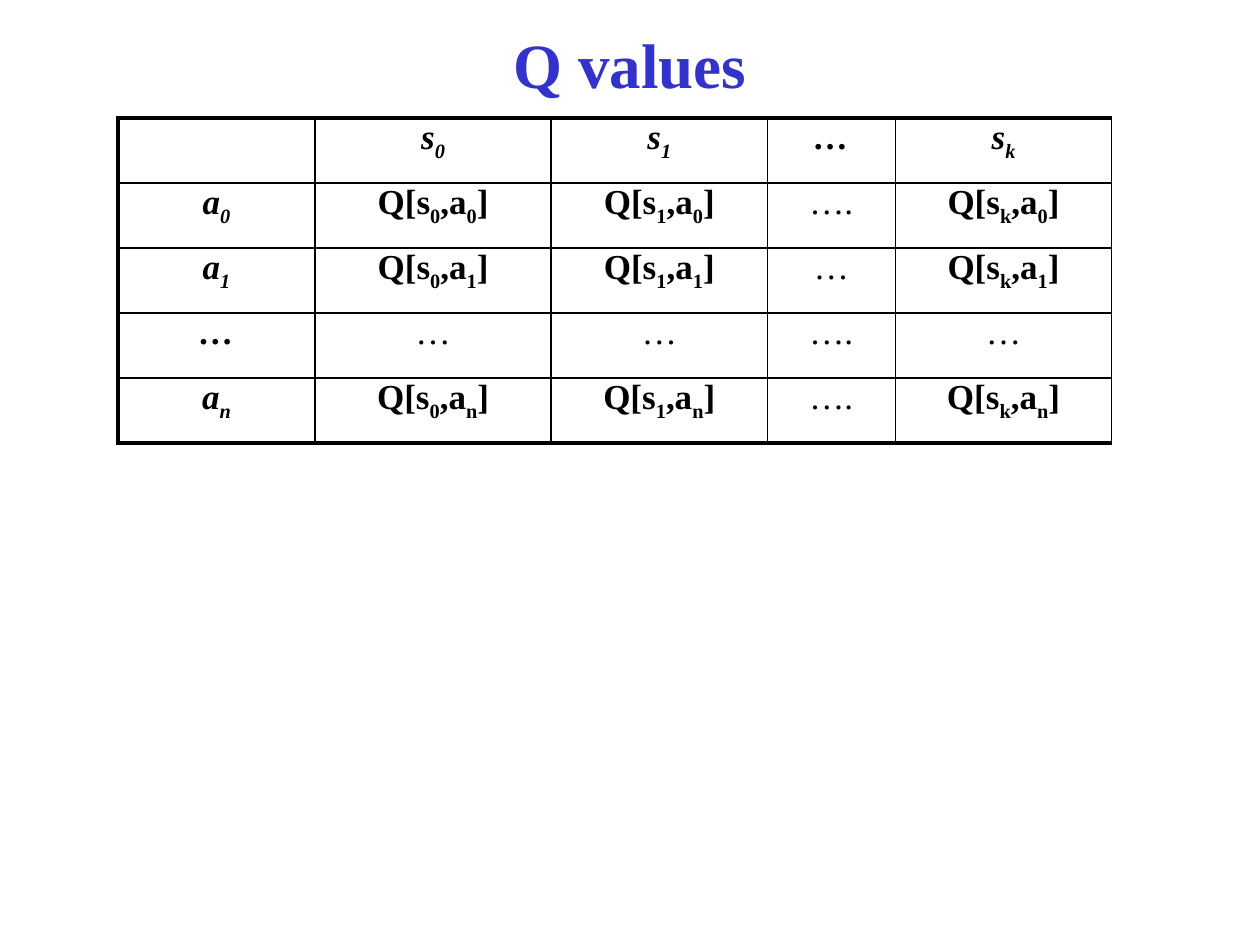
import pptx
import pptx.dml.color
import pptx.enum.text
import pptx.oxml.ns
import pptx.util
from lxml import etree

Cm, Pt = pptx.util.Cm, pptx.util.Pt
Align = pptx.enum.text.PP_ALIGN
Anchor = pptx.enum.text.MSO_ANCHOR

TITLE = "Q values"
STATES = ["0", "1", None, "k"]
ACTS = ["0", "1", None, "n"]
DOTS = [
    [None, None, "….", None],
    [None, None, "…", None],
    ["…", "…", "….", "…"],
    [None, None, "….", None],
]
WIDTHS = [3.97, 4.76, 4.36, 2.58, 4.36]
ROW = 1.31
LEFT, TOP = 2.38, 2.38
THEME = {
    "font": "Times New Roman",
    "title": "3333CC",
    "ink": "000000",
    "big": 36,
    "body": 20,
    "thin": 1,
    "thick": 2.25,
}


def add_run(para, text, size, color, bold=True, slant=False, sub=False):
    run = para.add_run()
    run.text = text
    font = run.font
    font.name = THEME["font"]
    font.size = Pt(size)
    font.bold = bold
    font.italic = slant
    font.color.rgb = pptx.dml.color.RGBColor.from_string(color)
    if sub:
        run._r.get_or_add_rPr().set("baseline", "-25000")


def add_edge(cell, side, width):
    qn = pptx.oxml.ns.qn
    line = etree.SubElement(cell._tc.get_or_add_tcPr(), qn(f"a:ln{side}"), w=str(Pt(width)))
    fill = etree.SubElement(line, qn("a:solidFill"))
    etree.SubElement(fill, qn("a:srgbClr"), val=THEME["ink"])


def label(name, sub):
    return [(name, False), (sub, True)] if sub else [("…", False)]


def entry(state, act, dots):
    if dots:
        return [(dots, False)]
    return [("Q[s", False), (state, True), (",a", False), (act, True), ("]", False)]


def fill_cell(cell, parts, bold, slant):
    cell.margin_left = cell.margin_right = Cm(0.25)
    cell.margin_top = cell.margin_bottom = 0
    para = cell.text_frame.paragraphs[0]
    para.alignment = Align.CENTER
    para.space_before = Pt(18)
    for text, sub in parts:
        add_run(para, text, THEME["body"], THEME["ink"], bold, slant, sub)


def add_title(slide):
    box = slide.shapes.add_textbox(Cm(0.85), Cm(0.42), Cm(23.7), Cm(1.9))
    frame = box.text_frame
    frame.word_wrap = True
    frame.vertical_anchor = Anchor.MIDDLE
    para = frame.paragraphs[0]
    para.alignment = Align.CENTER
    para.line_spacing = 0.9
    add_run(para, TITLE, THEME["big"], THEME["title"])


def add_grid(slide):
    head = [[]] + [label("s", state) for state in STATES]
    body = [
        [label("a", act)] + [entry(state, act, dots) for state, dots in zip(STATES, line)]
        for act, line in zip(ACTS, DOTS)
    ]
    rows = [head] + body
    count = len(rows)
    table = slide.shapes.add_table(
        count, len(WIDTHS), Cm(LEFT), Cm(TOP), Cm(sum(WIDTHS)), Cm(ROW * count)
    ).table
    table.first_row = table.horz_banding = False
    for col, width in zip(table.columns, WIDTHS):
        col.width = Cm(width)
    for r, line in enumerate(rows):
        table.rows[r].height = Cm(ROW)
        for c, parts in enumerate(line):
            cell = table.cell(r, c)
            edge = r == 0 or c == 0
            plain = not edge and len(parts) == 1
            fill_cell(cell, parts, not plain, edge)
            heavy = {"L": c == 0, "R": False, "T": r == 0, "B": r == count - 1}
            for side, thick in heavy.items():
                add_edge(cell, side, THEME["thick" if thick else "thin"])
            cell.fill.background()


def main():
    deck = pptx.Presentation()
    deck.slide_width, deck.slide_height = Cm(25.4), Cm(19.05)
    slide = deck.slides.add_slide(deck.slide_layouts[6])
    add_title(slide)
    add_grid(slide)
    deck.save("out.pptx")


if __name__ == "__main__":
    main()
